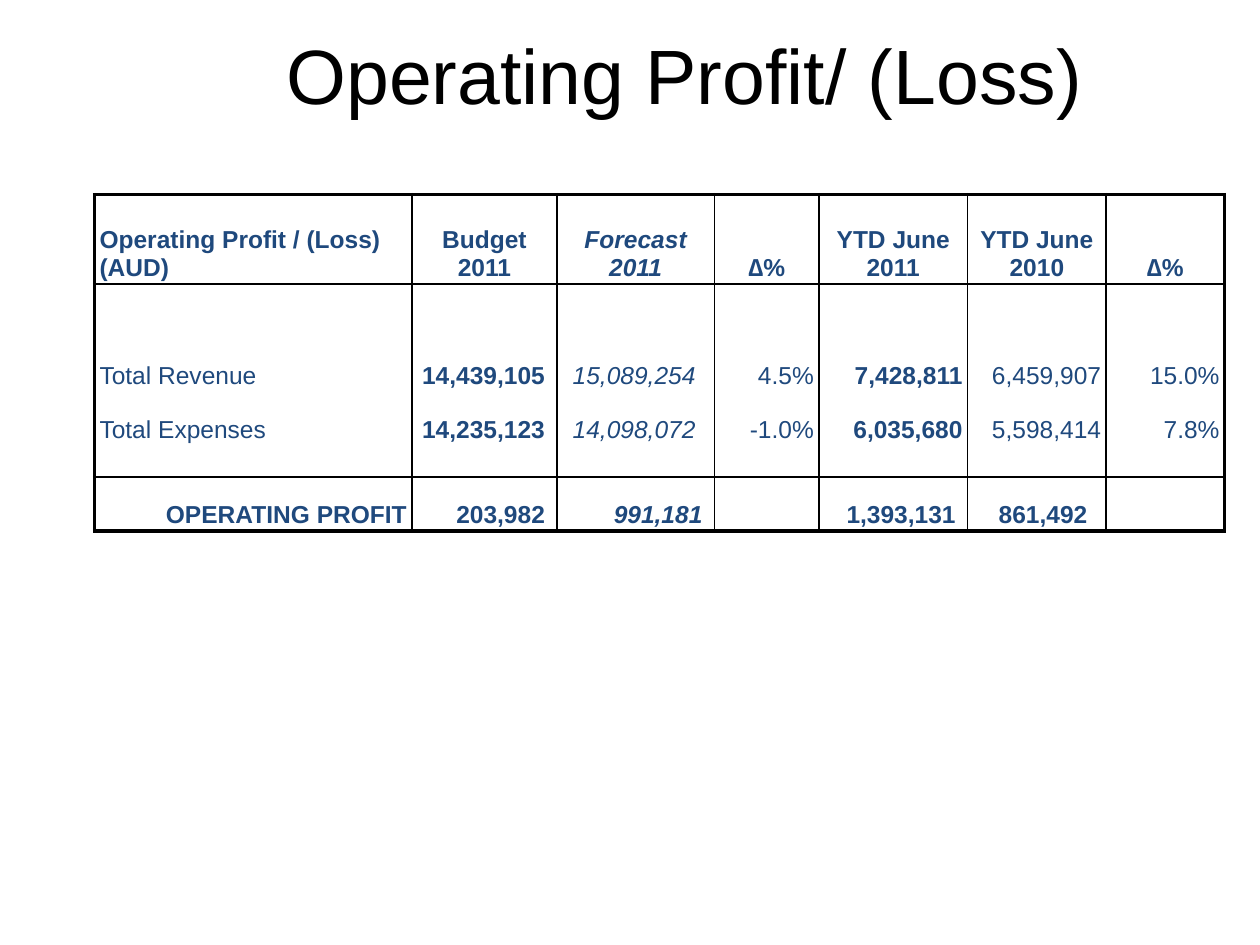
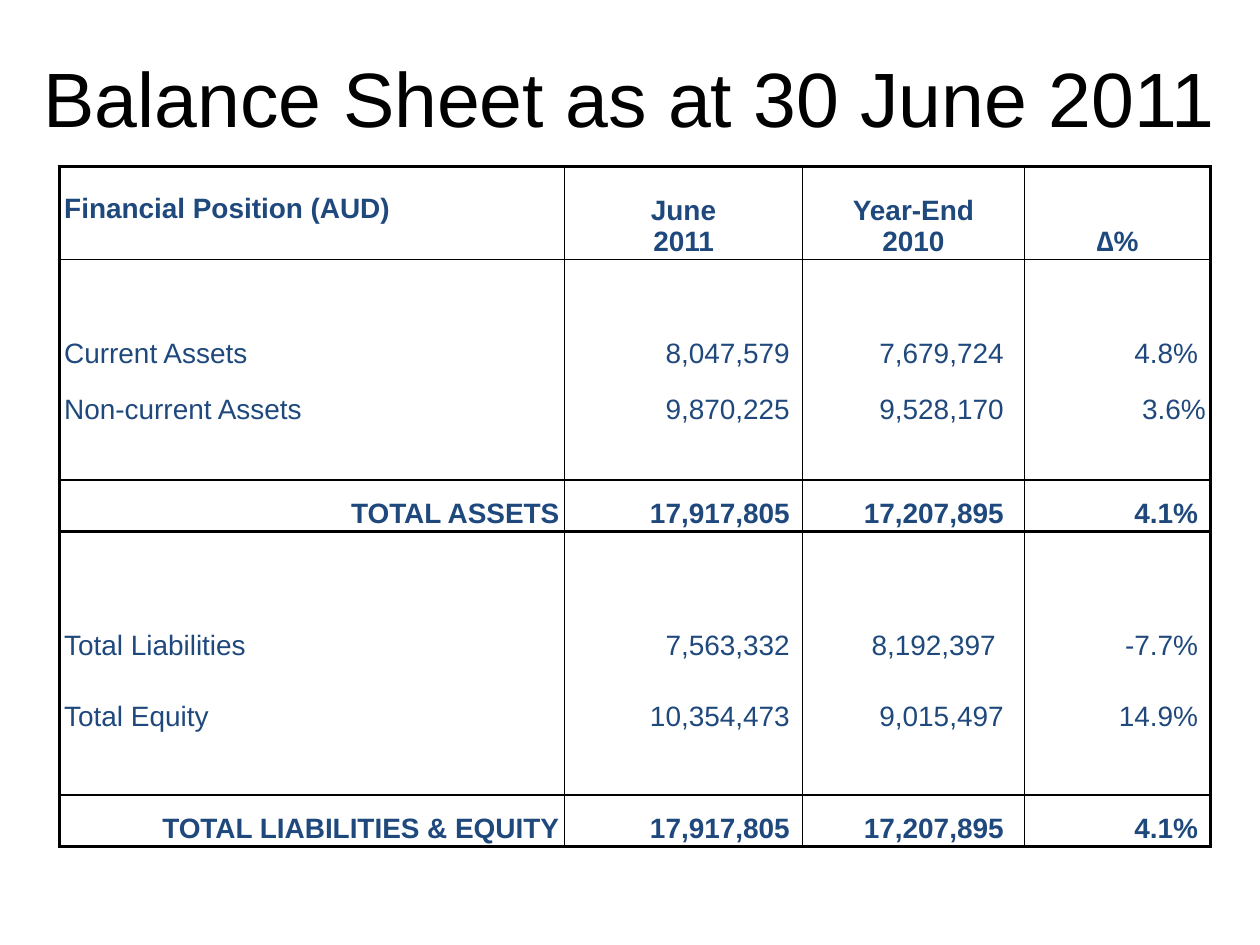
from lxml.etree import SubElement
from pptx import Presentation
from pptx.dml.color import RGBColor
from pptx.enum.text import MSO_ANCHOR, PP_ALIGN
from pptx.oxml.ns import qn
from pptx.util import Emu, Inches, Pt

FONT = "Arial"
BLACK, NAVY = "000000", "1F497D"
THIN, THICK = 1, 2.25
SIDE_INSET, EDGE_INSET = 0.04, 0.02
SPACE_WIDTH = 0.28  # of the text size
NO_GRID_STYLE = "{2D5ABB26-0587-4C30-8999-92F81FD0307C}"
HEADER, BODY, TOTAL = "header", "body", "total"

deck = Presentation()
deck.slide_width, deck.slide_height = Inches(10), Inches(7.5)


def color(hex_code):
    return RGBColor.from_string(hex_code)


def place(left, top, width, height):
    """Turn percentages of the slide into a box."""
    across, down = deck.slide_width / 100, deck.slide_height / 100
    return [Emu(round(share * unit)) for share, unit in
            ((left, across), (top, down), (width, across), (height, down))]


def share_out(length, weights):
    return [Emu(round(length * weight / sum(weights))) for weight in weights]


def add_run(paragraph, text, size, hex_code, bold=False, italic=False):
    run = paragraph.add_run()
    run.text = text
    run.font.name, run.font.size = FONT, Pt(size)
    run.font.bold, run.font.italic = bold, italic
    run.font.color.rgb = color(hex_code)


def add_title(slide, box, text):
    frame = slide.shapes.add_textbox(*place(*box)).text_frame
    frame.word_wrap = True
    frame.vertical_anchor = MSO_ANCHOR.MIDDLE
    frame.paragraphs[0].alignment = PP_ALIGN.CENTER
    add_run(frame.paragraphs[0], text, 44, BLACK)


def rule_cell(cell, **widths):
    """Draw the edges L, R, T and B; a width of 0 leaves the edge open."""
    properties = cell._tc.get_or_add_tcPr()
    for edge in "LRTB":
        line = SubElement(properties, qn(f"a:ln{edge}"), w=str(Pt(widths[edge])))
        if widths[edge]:
            fill = SubElement(line, qn("a:solidFill"))
            SubElement(fill, qn("a:srgbClr"), val=BLACK)
        else:
            SubElement(line, qn("a:noFill"))


def write_cell(cell, text, size, align, bold, italic, pad):
    cell.vertical_anchor = MSO_ANCHOR.BOTTOM
    cell.margin_left = Inches(SIDE_INSET)
    cell.margin_right = Inches(SIDE_INSET) + Pt(pad * SPACE_WIDTH * size)
    cell.margin_top = cell.margin_bottom = Inches(EDGE_INSET)
    frame = cell.text_frame
    if not text:  # small type keeps empty rows at their set height
        SubElement(frame.paragraphs[0]._p, qn("a:endParaRPr"), sz="800")
        return
    for number, line in enumerate(text.split("\n")):
        paragraph = frame.add_paragraph() if number else frame.paragraphs[0]
        paragraph.alignment = align
        add_run(paragraph, line, size, NAVY, bold, italic)


def rule_below(kinds, row):
    if kinds[row] == TOTAL:
        return THICK
    return THIN if kinds[row] == HEADER or kinds[row + 1] == TOTAL else 0


def add_statement(slide, box, columns, rows, size, bold_columns=(), italic_columns=()):
    """Place a financial table; each row is (weight, kind, texts, pads in spaces)."""
    left, top, width, height = place(*box)
    graphic = slide.shapes.add_table(len(rows), len(columns), left, top, width, height)
    table = graphic.table
    table.first_row = table.horz_banding = False
    graphic._element.find(".//" + qn("a:tableStyleId")).text = NO_GRID_STYLE
    for column, column_width in zip(table.columns, share_out(width, columns)):
        column.width = column_width
    for row, row_height in zip(table.rows, share_out(height, [row[0] for row in rows])):
        row.height = row_height

    kinds = [row[1] for row in rows]
    last = len(columns) - 1
    for r, (_, kind, texts, pads) in enumerate(rows):
        for c in range(len(columns)):
            cell = table.cell(r, c)
            if c == 0:
                align = PP_ALIGN.RIGHT if kind == TOTAL else PP_ALIGN.LEFT
            else:
                align = PP_ALIGN.CENTER if kind == HEADER else PP_ALIGN.RIGHT
            write_cell(cell, texts[c] if texts else "", size, align,
                       kind != BODY or c in bold_columns, c in italic_columns,
                       pads[c] if pads else 0)
            rule_cell(cell, L=THIN if c else THICK, R=THIN if c < last else THICK,
                      T=rule_below(kinds, r - 1) if r else THICK,
                      B=rule_below(kinds, r))
            cell.fill.background()
    return table


def build_operating_profit(slide):
    add_title(slide, (8.7, 2.27, 91.3, 11.07), "Operating Profit/ (Loss)")
    pads = (0, 1, 2, 0, 0, 0, 0)
    add_statement(
        slide, (7.5, 20.6, 89.7, 35.6),
        (2.52, 1.15, 1.25, 0.83, 1.18, 1.1, 0.94),
        [
            (0.71, HEADER, ("Operating Profit / (Loss)\n(AUD)", "Budget\n2011", "Forecast 2011",
                            "∆%", "YTD June 2011", "YTD June 2010", "∆%"), None),
            (0.43, BODY, None, None),
            (0.43, BODY, ("Total Revenue", "14,439,105", "15,089,254", "4.5%",
                          "7,428,811", "6,459,907", "15.0%"), pads),
            (0.43, BODY, ("Total Expenses", "14,235,123", "14,098,072", "-1.0%",
                          "6,035,680", "5,598,414", "7.8%"), pads),
            (0.24, BODY, None, None),
            (0.43, TOTAL, ("OPERATING PROFIT", "203,982", "991,181", "",
                           "1,393,131", "861,492", ""), (0, 1, 1, 0, 1, 2, 0)),
        ],
        size=14, bold_columns=(1, 4), italic_columns=(2,))


def build_balance_sheet(slide):
    add_title(slide, (0, 3.07, 100, 14.4), "Balance Sheet as at 30 June 2011")
    pads = (0, 1, 2, 1)
    size = 16
    position = add_statement(
        slide, (4.7, 17.6, 91.4, 72),
        (4.01, 1.89, 1.76, 1.48),
        [
            (0.74, HEADER, ("Financial Position (AUD)", "June\n2011", "Year-End\n2010", "∆%"), None),
            (0.48, BODY, None, None),
            (0.41, BODY, ("Current Assets", "8,047,579", "7,679,724", "4.8%"), pads),
            (0.45, BODY, ("Non-current Assets", "9,870,225", "9,528,170", "3.6%"), (0, 1, 2, 0)),
            (0.41, BODY, None, None),
            (0.41, TOTAL, ("TOTAL ASSETS", "17,917,805", "17,207,895", "4.1%"), pads),
            (0.49, BODY, None, None),
            (0.56, BODY, ("Total Liabilities", "7,563,332", "8,192,397", "-7.7%"), (0, 1, 3, 1)),
            (0.56, BODY, ("Total Equity", "10,354,473", "9,015,497", "14.9%"), pads),
            (0.48, BODY, None, None),
            (0.41, TOTAL, ("TOTAL LIABILITIES & EQUITY", "17,917,805", "17,207,895", "4.1%"), pads),
        ],
        size=size)
    # Lift the heading one line, level with the first line of its neighbours
    position.cell(0, 0).margin_bottom = Inches(EDGE_INSET) + Pt(1.15 * size)


def main():
    for build in (build_operating_profit, build_balance_sheet):
        build(deck.slides.add_slide(deck.slide_layouts[6]))
    deck.save("out.pptx")


if __name__ == "__main__":
    main()
